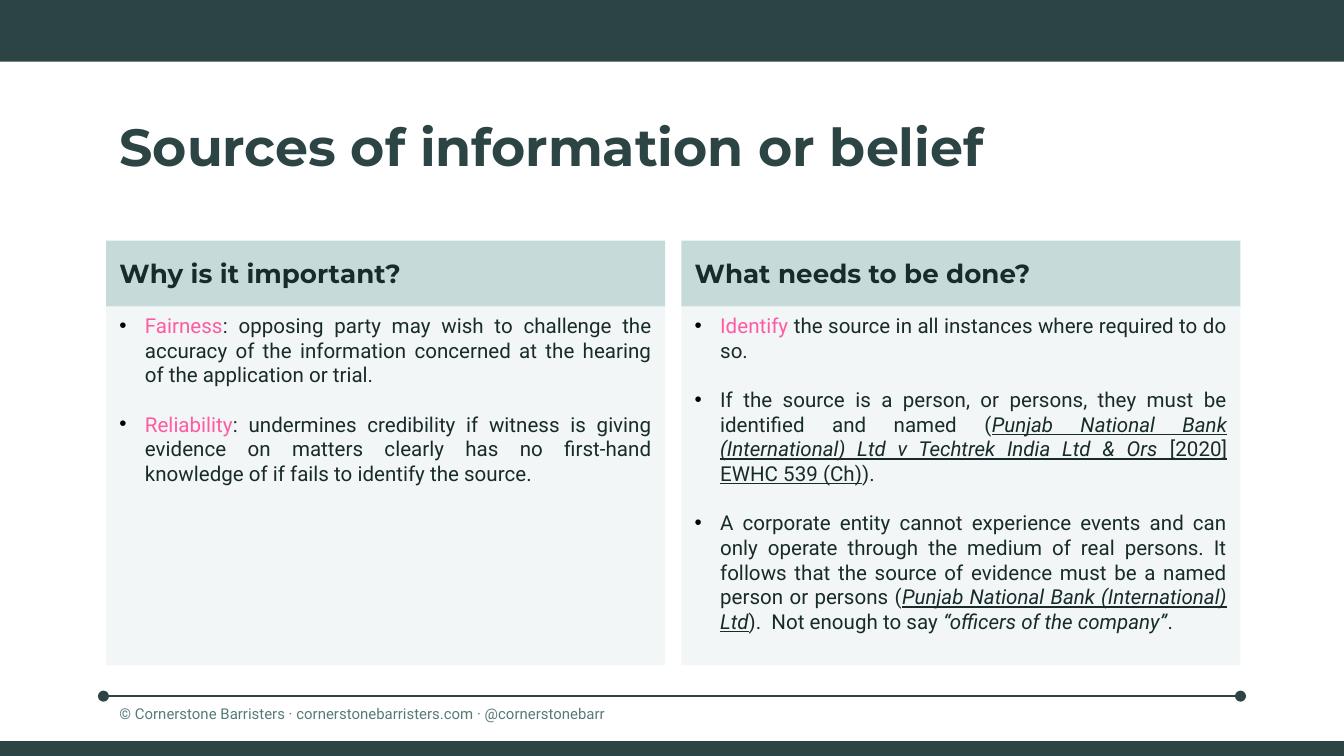
from lxml.etree import SubElement
from pptx import Presentation
from pptx.dml.color import RGBColor
from pptx.enum.shapes import MSO_CONNECTOR, MSO_SHAPE
from pptx.enum.text import MSO_ANCHOR, MSO_AUTO_SIZE, PP_ALIGN
from pptx.oxml.ns import qn
from pptx.util import Inches, Pt

# Colours and fonts
DARK = RGBColor(0x2C, 0x44, 0x44)
INK = RGBColor(0x18, 0x2B, 0x2A)
PINK = RGBColor(0xFF, 0x5A, 0xA4)
GREY_GREEN = RGBColor(0x56, 0x7A, 0x78)
HEADER_FILL = RGBColor(0xC6, 0xDA, 0xDA)
BODY_FILL = RGBColor(0xF2, 0xF6, 0xF6)
HEADING_FONT, BODY_FONT = "Montserrat", "Roboto"

# Grid
WIDTH = 10
HEIGHT = WIDTH * 9 / 16
BAND_WIDTH = 10.14
LEFT, CONTENT_WIDTH, GAP = 0.79, 8.44, 0.12
COLUMN_WIDTH = (CONTENT_WIDTH - GAP) / 2
HEADER_TOP, BODY_TOP, BODY_BOTTOM = 1.79, 2.28, 4.95
HANG = 0.19

# Text formats of the runs
KEY = {"color": PINK}
CASE = {"italic": True, "underline": True}
CITATION = {"underline": True}
QUOTE = {"italic": True}

# Each column: heading, then bullets made of (text, format) runs
COLUMNS = [
    ("Why is it important?", [
        [("Fairness", KEY),
         (": opposing party may wish to challenge the accuracy of the information "
          "concerned at the hearing of the application or trial.", {})],
        [("Reliability", KEY),
         (": undermines credibility if witness is giving evidence on matters clearly "
          "has no first-hand knowledge of if fails to identify the source.", {})],
    ]),
    ("What needs to be done?", [
        [("Identify", KEY),
         (" the source in all instances where required to do so.", {})],
        [("If the source is a person, or persons, they must be identified and named (", {}),
         ("Punjab National Bank (International) Ltd v Techtrek India Ltd & Ors", CASE),
         (" [2020] EWHC 539 (Ch)", CITATION),
         (").", {})],
        [("A corporate entity cannot experience events and can only operate through the "
          "medium of real persons. It follows that the source of evidence must be a "
          "named person or persons (", {}),
         ("Punjab National Bank (International) Ltd", CASE),
         (").  Not enough to say ", {}),
         ("“officers of the company”", QUOTE),
         (".", {})],
    ]),
]


def add_run(para, text, font=BODY_FONT, size=11, color=INK, bold=False,
            italic=False, underline=False):
    span = para.add_run()
    span.text = text
    span.font.name = font
    span.font.size = Pt(size)
    span.font.color.rgb = color
    span.font.bold = bold
    span.font.italic = italic
    span.font.underline = underline


def set_frame(box, anchor):
    frame = box.text_frame
    frame.word_wrap = True
    frame.auto_size = MSO_AUTO_SIZE.NONE
    frame.vertical_anchor = anchor
    frame.paragraphs[0].alignment = PP_ALIGN.LEFT
    return frame


def add_panel(page, left, top, width, height, fill):
    panel = page.shapes.add_shape(MSO_SHAPE.RECTANGLE, Inches(left), Inches(top),
                                  Inches(width), Inches(height))
    panel.shadow.inherit = False
    panel.fill.solid()
    panel.fill.fore_color.rgb = fill
    panel.line.fill.background()
    return panel


def make_bullet(para):
    para.alignment = PP_ALIGN.JUSTIFY
    props = para._p.get_or_add_pPr()
    props.set("marL", str(Inches(HANG)))
    props.set("indent", str(-Inches(HANG)))
    color = SubElement(props, qn("a:buClr"))
    SubElement(color, qn("a:srgbClr")).set("val", "000000")
    SubElement(props, qn("a:buFont")).set("typeface", "Arial")
    SubElement(props, qn("a:buChar")).set("char", "•")


def add_column(page, left, heading, bullets):
    body = add_panel(page, left, BODY_TOP, COLUMN_WIDTH, BODY_BOTTOM - BODY_TOP, BODY_FILL)
    frame = set_frame(body, MSO_ANCHOR.TOP)
    for index, runs in enumerate(bullets):
        para = frame.add_paragraph() if index else frame.paragraphs[0]
        make_bullet(para)
        if index:
            para.space_before = Pt(13.2)  # one line
        for text, style in runs:
            add_run(para, text, **style)

    header = add_panel(page, left, HEADER_TOP, COLUMN_WIDTH, BODY_TOP - HEADER_TOP, HEADER_FILL)
    frame = set_frame(header, MSO_ANCHOR.MIDDLE)
    add_run(frame.paragraphs[0], heading, font=HEADING_FONT, size=14, bold=True)


def set_title(page, text):
    title = page.shapes.title
    title.left, title.top = Inches(LEFT), Inches(0.79)
    title.width, title.height = Inches(CONTENT_WIDTH), Inches(0.58)
    frame = set_frame(title, MSO_ANCHOR.MIDDLE)
    add_run(frame.paragraphs[0], text, font=HEADING_FONT, size=28, color=DARK, bold=True)


def add_footer(page, text):
    # Rule with round ends
    rule = page.shapes.add_connector(MSO_CONNECTOR.STRAIGHT, Inches(0.77), Inches(5.18),
                                     Inches(WIDTH - 0.77), Inches(5.18))
    rule.line.color.rgb = DARK
    rule.line.width = Pt(0.75)
    line = rule.line._get_or_add_ln()
    for end in ("a:headEnd", "a:tailEnd"):
        SubElement(line, qn(end)).set("type", "oval")
    SubElement(rule._element.spPr, qn("a:effectLst"))

    # Footer text
    box = page.shapes.add_textbox(Inches(LEFT), Inches(5.14), Inches(4.95), Inches(0.31))
    frame = set_frame(box, MSO_ANCHOR.TOP)
    frame.margin_top = frame.margin_bottom = Inches(0.1)
    add_run(frame.paragraphs[0], text, size=8, color=GREY_GREEN)


def main():
    deck = Presentation()
    deck.slide_width, deck.slide_height = Inches(WIDTH), Inches(HEIGHT)
    page = deck.slides.add_slide(deck.slide_layouts[5])

    # Bands at the top and bottom edges
    for top, height in ((0, 0.46), (HEIGHT - 0.11, 0.11)):
        add_panel(page, 0, top, BAND_WIDTH, height, DARK)

    set_title(page, "Sources of information or belief")
    for index, (heading, bullets) in enumerate(COLUMNS):
        add_column(page, LEFT + index * (COLUMN_WIDTH + GAP), heading, bullets)
    add_footer(page, "© Cornerstone Barristers · cornerstonebarristers.com · @cornerstonebarr")

    deck.save("out.pptx")


if __name__ == "__main__":
    main()
